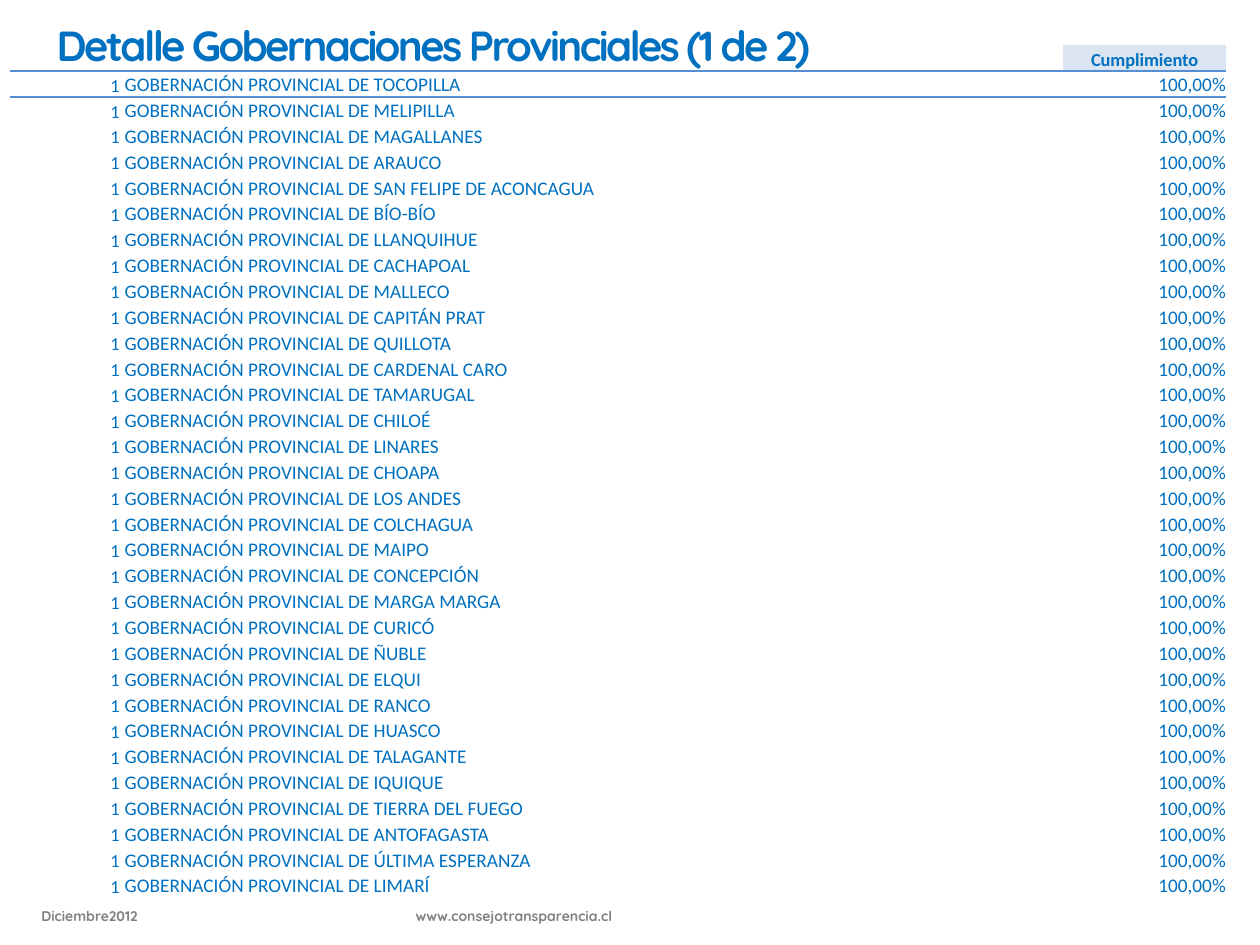
from lxml.etree import SubElement
from pptx import Presentation
from pptx.dml.color import RGBColor
from pptx.enum.text import MSO_ANCHOR as Anchor, PP_ALIGN as Align
from pptx.oxml import parse_xml
from pptx.oxml.ns import nsdecls, qn
from pptx.util import Inches, Pt

BLUE = RGBColor(0x00, 0x70, 0xC0)
PALE_BLUE = RGBColor(0xDB, 0xE5, 0xF1)
RULE_BLUE = RGBColor(0x55, 0x8E, 0xD5)
GRAY = RGBColor(0x80, 0x80, 0x80)
WHITE = RGBColor(0xFF, 0xFF, 0xFF)
NO_STYLE = "{2D5ABB26-0587-4C30-8999-92F81FD0307C}"

# Content
TITLE = "Detalle Gobernaciones Provinciales (1 de 2)"
FOOTER = "Diciembre2012\twww.consejotransparencia.cl"
HEADER = ("", "", "Cumplimiento")
PREFIX = "GOBERNACIÓN PROVINCIAL DE "
PROVINCES = [
    "TOCOPILLA", "MELIPILLA", "MAGALLANES", "ARAUCO",
    "SAN FELIPE DE ACONCAGUA", "BÍO-BÍO", "LLANQUIHUE", "CACHAPOAL",
    "MALLECO", "CAPITÁN PRAT", "QUILLOTA", "CARDENAL CARO",
    "TAMARUGAL", "CHILOÉ", "LINARES", "CHOAPA",
    "LOS ANDES", "COLCHAGUA", "MAIPO", "CONCEPCIÓN",
    "MARGA MARGA", "CURICÓ", "ÑUBLE", "ELQUI",
    "RANCO", "HUASCO", "TALAGANTE", "IQUIQUE",
    "TIERRA DEL FUEGO", "ANTOFAGASTA", "ÚLTIMA ESPERANZA", "LIMARÍ",
]
ROWS = [HEADER] + [("1", PREFIX + name, "100,00%") for name in PROVINCES]

# Column layout: width, alignment, text size, right inset
COLUMNS = [
    (0.91, Align.RIGHT, 10.5, 0.04),
    (7.45, Align.LEFT, 11, 0),
    (1.29, Align.RIGHT, 11, 0),
]
TABLE_LEFT, TABLE_TOP, TABLE_HEIGHT = 0.08, 0.36, 6.77
FOOTER_TAB = 2.97


def add_run(paragraph, text, size, color, font="Calibri", bold=False):
    run = paragraph.add_run()
    run.text = text
    run.font.color.rgb = color
    for name, value in {"name": font, "size": Pt(size), "bold": bold}.items():
        setattr(run.font, name, value)
    return run


def add_text(slide, box, text, size, color, anchor):
    shape = slide.shapes.add_textbox(*map(Inches, box))
    shape.text_frame.word_wrap = True
    shape.text_frame.vertical_anchor = anchor
    paragraph = shape.text_frame.paragraphs[0]
    return paragraph, add_run(paragraph, text, size, color, "Quicksand", True)


def add_border(cell, side):
    """Draw a 1 pt rule on one side of a cell; lines come before the fill."""
    cell._tc.get_or_add_tcPr().insert(0, parse_xml(
        f'<a:{side} {nsdecls("a")} w="{Pt(1)}"><a:solidFill>'
        f'<a:srgbClr val="{RULE_BLUE}"/></a:solidFill></a:{side}>'))


def fill_cell(cell, text, row, column):
    _, align, size, inset = COLUMNS[column]
    is_header = row == 0
    formats = {
        "margin_left": 0, "margin_top": 0, "margin_bottom": 0,
        "margin_right": Inches(inset), "vertical_anchor": Anchor.BOTTOM,
    }
    for name, value in formats.items():
        setattr(cell, name, value)
    cell.fill.solid()
    cell.fill.fore_color.rgb = PALE_BLUE if is_header and text else WHITE
    paragraph = cell.text_frame.paragraphs[0]
    paragraph.alignment = Align.CENTER if is_header else align
    if text:
        add_run(paragraph, text, 10.5 if is_header else size, BLUE, bold=is_header)
    else:
        # Small text size keeps the empty cell from stretching its row
        SubElement(paragraph._p, qn("a:endParaRPr"), sz="1050")
    if row < 2:
        add_border(cell, "lnB" if is_header else "lnT")


def add_compliance_table(slide):
    width = sum(column[0] for column in COLUMNS)
    frame = slide.shapes.add_table(
        len(ROWS), len(COLUMNS),
        *map(Inches, (TABLE_LEFT, TABLE_TOP, width, TABLE_HEIGHT)))
    table = frame.table
    table.first_row = table.horz_banding = False
    table._tbl.tblPr.find(qn("a:tableStyleId")).text = NO_STYLE
    for column, layout in zip(table.columns, COLUMNS):
        column.width = Inches(layout[0])
    for row, texts in enumerate(ROWS):
        table.rows[row].height = Inches(TABLE_HEIGHT / len(ROWS))
        for column, text in enumerate(texts):
            fill_cell(table.cell(row, column), text, row, column)


def main():
    presentation = Presentation()
    presentation.slide_width, presentation.slide_height = Inches(10), Inches(7.5)
    slide = presentation.slides.add_slide(presentation.slide_layouts[6])

    add_compliance_table(slide)

    # Footer: date, then the address at a tab stop
    paragraph, _ = add_text(
        slide, (0.23, 7.15, 9.77, 0.5), FOOTER, 8, GRAY, Anchor.TOP)
    tabs = SubElement(paragraph._p.get_or_add_pPr(), qn("a:tabLst"))
    SubElement(tabs, qn("a:tab"), pos=str(Inches(FOOTER_TAB)), algn="l")

    # Title with tightened letter spacing
    _, run = add_text(
        slide, (0.35, -0.27, 9.51, 1.25), TITLE, 24, BLUE, Anchor.MIDDLE)
    run.font._element.set("spc", "-150")

    presentation.save("out.pptx")


if __name__ == "__main__":
    main()
